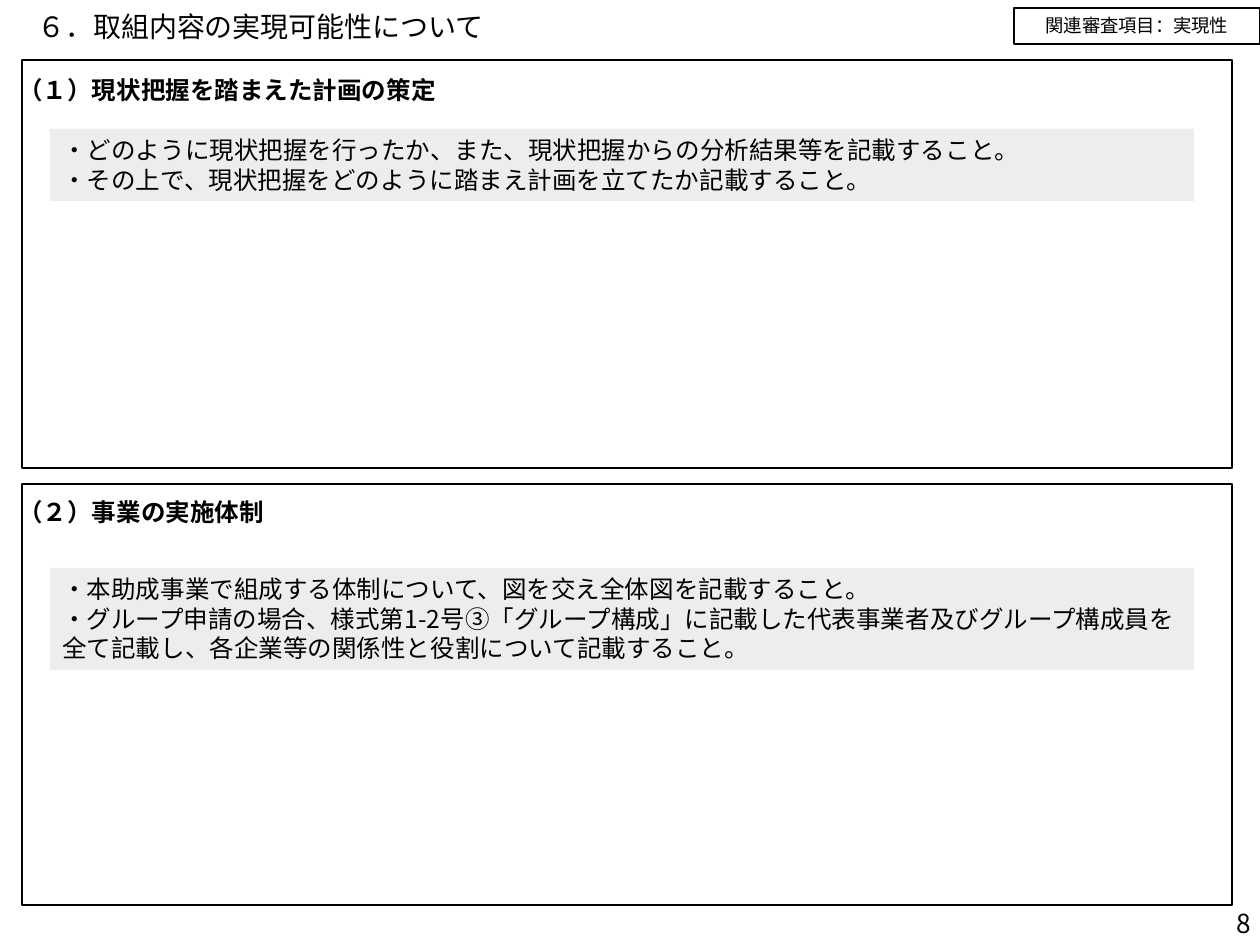
"""Build the feasibility slide with its two framed sections."""
from dataclasses import dataclass

import lxml.etree
import pptx
import pptx.dml.color
import pptx.enum.shapes
import pptx.enum.text
import pptx.oxml.ns
import pptx.util

PIXELS_PER_INCH = 126
ALIGN = pptx.enum.text.PP_ALIGN
ANCHOR = pptx.enum.text.MSO_ANCHOR


@dataclass(frozen=True)
class Theme:
    font: str = "Noto Sans CJK JP"
    ink: str = "000000"
    note_fill: str = "EDEDED"
    title_size: float = 16
    page_number_size: float = 15
    body_size: float = 14
    tag_size: float = 10.5
    frame_line: float = 1
    tag_line: float = 0.75


@dataclass(frozen=True)
class Area:
    left: int
    top: int
    width: int
    height: int


@dataclass(frozen=True)
class Section:
    heading: str
    notes: tuple[str, ...]
    frame: Area
    heading_top: int
    note_area: Area


THEME = Theme()
SECTIONS = (
    Section(
        "（１）現状把握を踏まえた計画の策定",
        (
            "・どのように現状把握を行ったか、また、現状把握からの分析結果等を記載すること。",
            "・その上で、現状把握をどのように踏まえ計画を立てたか記載すること。",
        ),
        Area(22, 60, 1210, 408), 69, Area(50, 129, 1144, 72),
    ),
    Section(
        "（２）事業の実施体制",
        (
            "・本助成事業で組成する体制について、図を交え全体図を記載すること。",
            "・グループ申請の場合、様式第1-2号③「グループ構成」に記載した代表事業者及び"
            "グループ構成員を全て記載し、各企業等の関係性と役割について記載すること。",
        ),
        Area(22, 484, 1210, 421), 491, Area(50, 568, 1144, 102),
    ),
)


def px(length: int) -> pptx.util.Emu:
    return pptx.util.Emu(round(length * 914400 / PIXELS_PER_INCH))


def bounds(area: Area) -> tuple:
    return px(area.left), px(area.top), px(area.width), px(area.height)


def color(value: str) -> pptx.dml.color.RGBColor:
    return pptx.dml.color.RGBColor.from_string(value)


def write_text(box, text: str, *, size: float, bold: bool = False,
               align=ALIGN.LEFT, anchor=ANCHOR.TOP, line_spacing: float = 1.0) -> None:
    frame = box.text_frame
    frame.text = text
    frame.word_wrap = True
    frame.vertical_anchor = anchor
    for para in frame.paragraphs:
        para.alignment = align
        para.line_spacing = line_spacing
        for span in para.runs:
            span.font.name = THEME.font
            span.font.size = pptx.util.Pt(size)
            span.font.bold = bold
            span.font.color.rgb = color(THEME.ink)
            latin = span.font._element.find(pptx.oxml.ns.qn("a:latin"))
            east_asian = lxml.etree.Element(pptx.oxml.ns.qn("a:ea"), typeface=THEME.font)
            latin.addnext(east_asian)


def add_rectangle(page, area: Area, *, fill: str | None = None, line: float | None = None):
    box = page.shapes.add_shape(pptx.enum.shapes.MSO_SHAPE.RECTANGLE, *bounds(area))
    box.shadow.inherit = False
    if fill:
        box.fill.solid()
        box.fill.fore_color.rgb = color(fill)
    else:
        box.fill.background()
    if line:
        box.line.color.rgb = color(THEME.ink)
        box.line.width = pptx.util.Pt(line)
    else:
        box.line.fill.background()
    return box


def add_section(page, section: Section) -> None:
    add_rectangle(page, section.frame, line=THEME.frame_line)
    note = add_rectangle(page, section.note_area, fill=THEME.note_fill)
    write_text(note, "\n".join(section.notes), size=THEME.body_size)
    heading = page.shapes.add_textbox(*bounds(Area(6, section.heading_top, 795, 44)))
    write_text(heading, section.heading, size=THEME.body_size, bold=True)


def add_title(page) -> None:
    title = page.shapes.title
    title.left, title.top, title.width, title.height = bounds(Area(25, 6, 1190, 45))
    write_text(title, "６．取組内容の実現可能性について", size=THEME.title_size,
               anchor=ANCHOR.MIDDLE, line_spacing=0.9)


def add_tag(page) -> None:
    tag = add_rectangle(page, Area(1014, 8, 246, 36), line=THEME.tag_line)
    write_text(tag, "関連審査項目：実現性", size=THEME.tag_size, align=ALIGN.CENTER)


def add_page_number(page) -> None:
    number = page.shapes.add_textbox(*bounds(Area(1040, 914, 220, 19)))
    write_text(number, "8", size=THEME.page_number_size, align=ALIGN.RIGHT,
               anchor=ANCHOR.MIDDLE)
    frame = number.text_frame
    frame.margin_left = frame.margin_right = px(9)
    frame.margin_top = frame.margin_bottom = px(5)


def main() -> None:
    deck = pptx.Presentation()
    deck.slide_width, deck.slide_height = px(1260), px(945)
    page = deck.slides.add_slide(deck.slide_layouts.get_by_name("Title Only"))
    add_title(page)
    for section in SECTIONS:
        add_section(page, section)
    add_tag(page)
    add_page_number(page)
    deck.save("out.pptx")


if __name__ == "__main__":
    main()
